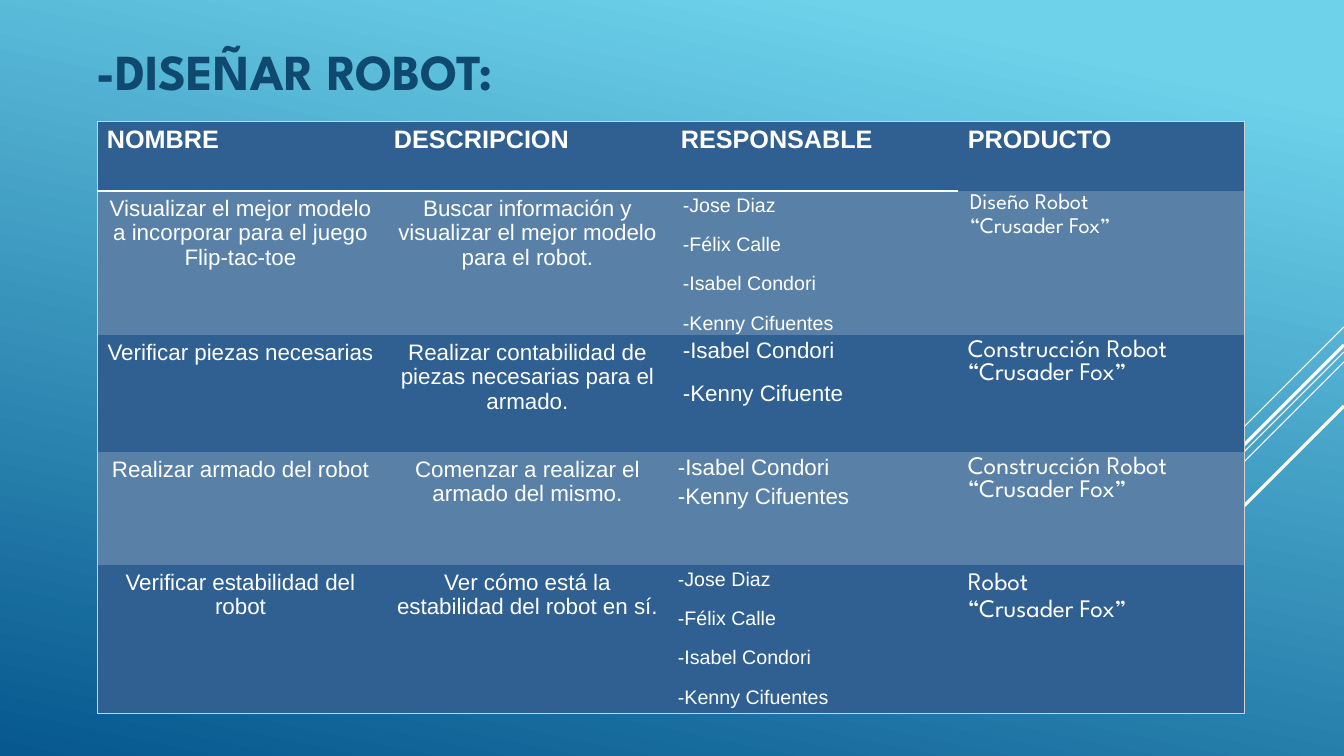
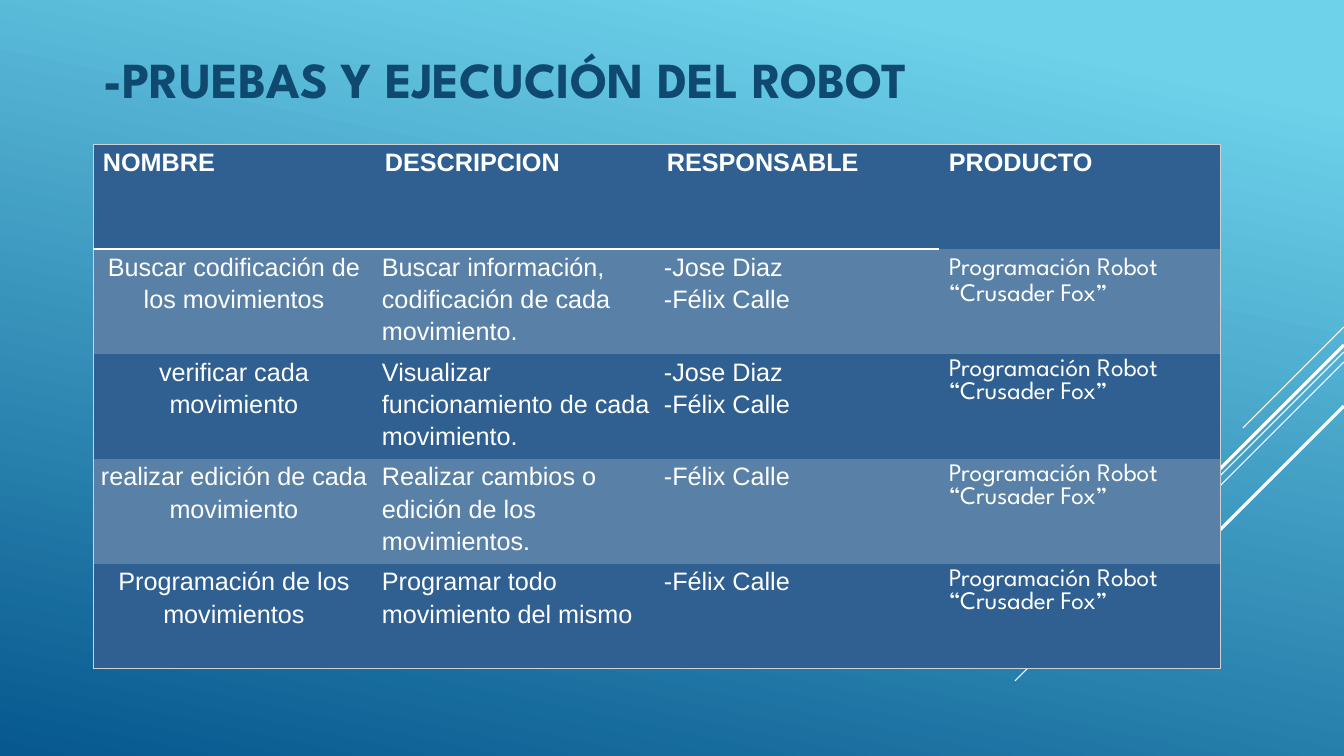
from lxml import etree
from pptx import Presentation
from pptx.dml.color import RGBColor
from pptx.enum.shapes import MSO_CONNECTOR
from pptx.enum.text import MSO_ANCHOR, MSO_AUTO_SIZE, PP_ALIGN
from pptx.oxml.ns import qn
from pptx.util import Pt

SLIDE_W, SLIDE_H = 1344, 756
EMU_PER_PX = 12192000 / SLIDE_W

WHITE = RGBColor(0xFF, 0xFF, 0xFF)
SKY = RGBColor(0x6E, 0xD2, 0xEB)
DEEP_BLUE = RGBColor(0x06, 0x58, 0x8E)
TITLE_BLUE = RGBColor(0x0F, 0x49, 0x6F)
ROW_DARK = RGBColor(0x2F, 0x60, 0x91)
ROW_LIGHT = RGBColor(0x59, 0x81, 0xA7)
FRAME_GREY = RGBColor(0xCF, 0xD1, 0xD5)

SANS, DISPLAY = "Arial", "League Spartan"
LEFT, CENTER = PP_ALIGN.LEFT, PP_ALIGN.CENTER
MIDDLE = MSO_ANCHOR.MIDDLE
NO_AUTOFIT = MSO_AUTO_SIZE.NONE
STRAIGHT = MSO_CONNECTOR.STRAIGHT
TITLE_ONLY = 5
NO_TABLE_STYLE = "{2D5ABB26-0587-4C30-8999-92F81FD0307C}"

# Diagonals from the right edge: start y, run in px, width in points
DIAGONALS = [(327, 101, 0.75), (352, 329, 0.75), (362, 209, 0.75),
             (345, 193, 2.25), (406, 140, 2.25)]

# Cell formats; margins are (side, top and bottom) in px
HEADER = dict(size=18, bold=True)
TASK = dict(size=16, align=CENTER)
TEAM = dict(size=14, spacing=1.15, gap=10, margins=(12, 0))
PAIR = dict(TEAM, size=16)
TIGHT_TEAM = dict(TEAM, margins=(7, 0))
TIGHT_PAIR = dict(size=16, spacing=1.15, margins=(7, 0))
PRODUCT = dict(size=18, font=DISPLAY)
LOOSE_PRODUCT = dict(PRODUCT, spacing=1.15)
SMALL_PRODUCT = dict(LOOSE_PRODUCT, size=16, margins=(12, 0))
STEP = dict(size=18, spacing=1.15, margins=(7, 0))
CENTERED_STEP = dict(STEP, align=CENTER)

HEADINGS = [(name, HEADER) for name in
            ("NOMBRE", "DESCRIPCION", "RESPONSABLE", "PRODUCTO")]
EVERYONE = "-Jose Diaz\n-Félix Calle\n-Isabel Condori\n-Kenny Cifuentes"
CODERS = "-Jose Diaz\n-Félix Calle"
BUILT = "Construcción Robot\v“Crusader Fox”"
PROGRAMMED = "Programación Robot\v“Crusader Fox”"

DESIGN_ROWS = [
    [("Visualizar el mejor modelo a incorporar para el juego Flip-tac-toe", TASK),
     ("Buscar información y visualizar el mejor modelo para el robot.", TASK),
     (EVERYONE, TEAM),
     ("Diseño Robot\v“Crusader Fox”", SMALL_PRODUCT)],
    [("Verificar piezas necesarias", TASK),
     ("Realizar contabilidad de piezas necesarias para el armado.", TASK),
     ("-Isabel Condori\n-Kenny Cifuente", PAIR),
     (BUILT, PRODUCT)],
    [("Realizar armado del robot", TASK),
     ("Comenzar a realizar el armado del mismo.", TASK),
     ("-Isabel Condori\n-Kenny Cifuentes", TIGHT_PAIR),
     (BUILT, PRODUCT)],
    [("Verificar estabilidad del robot", TASK),
     ("Ver cómo está la estabilidad del robot en sí.", TASK),
     (EVERYONE, TIGHT_TEAM),
     ("Robot\v“Crusader Fox”", LOOSE_PRODUCT)],
]

TEST_STEPS = [
    ("Buscar codificación de los movimientos",
     "Buscar información, codificación de cada movimiento.", CODERS),
    ("verificar cada movimiento",
     "Visualizar funcionamiento de cada movimiento.", CODERS),
    ("realizar edición de cada movimiento",
     "Realizar cambios o edición de los movimientos.", "-Félix Calle"),
    ("Programación de los movimientos",
     "Programar todo movimiento del mismo", "-Félix Calle"),
]
TEST_ROWS = [
    [(name, CENTERED_STEP), (description, STEP), (people, STEP),
     (PROGRAMMED, PRODUCT if i else LOOSE_PRODUCT)]
    for i, (name, description, people) in enumerate(TEST_STEPS)
]


def px(n):
    return round(n * EMU_PER_PX)


def write(tf, text, *, size, font=SANS, color=WHITE, bold=False, align=LEFT,
          spacing=1.0, gap=0):
    """Split text into paragraphs at newlines; \\v is a line break."""
    tf.word_wrap = True
    for i, line in enumerate(text.split("\n")):
        p = tf.add_paragraph() if i else tf.paragraphs[0]
        p.text = line
        p.alignment = align
        p.line_spacing = spacing
        p.space_before = Pt(gap if i else 0)
        for r in p.runs:
            r.font.name = font
            r.font.size = Pt(size)
            r.font.bold = bold
            r.font.color.rgb = color


def set_background(master):
    fill = master.background.fill
    fill.gradient()
    fill.gradient_angle = 258
    for stop, color, position in zip(fill.gradient_stops, (SKY, DEEP_BLUE), (0.1, 1)):
        stop.color.rgb = color
        stop.position = position


def add_diagonals(s):
    for y, run, width in DIAGONALS:
        line = s.shapes.add_connector(STRAIGHT, px(SLIDE_W), px(y),
                                      px(SLIDE_W - run), px(y + run))
        line.line.color.rgb = WHITE
        line.line.width = Pt(width)
        etree.SubElement(line.element.find(qn("p:spPr")), qn("a:effectLst"))


def place_title(s, text, x, y):
    title = s.shapes.title
    title.left, title.top, title.width, title.height = map(px, (x, y, 1092, 98))
    tf = title.text_frame
    tf.auto_size = NO_AUTOFIT
    tf.vertical_anchor = MIDDLE
    write(tf, text, size=36, font=DISPLAY, color=TITLE_BLUE, bold=True, spacing=0.9)


def add_border(cell, side, color, width, alpha=100):
    tc_pr = cell._tc.get_or_add_tcPr()
    ln = etree.SubElement(tc_pr, qn(f"a:ln{side}"), w=str(Pt(width)))
    fill = etree.SubElement(ln, qn("a:solidFill"))
    clr = etree.SubElement(fill, qn("a:srgbClr"), val=str(color))
    etree.SubElement(clr, qn("a:alpha"), val=str(alpha * 1000))


def format_cell(cell, text, *, margins=(10, 5), **text_format):
    side, end = map(px, margins)
    cell.margin_left = cell.margin_right = side
    cell.margin_top = cell.margin_bottom = end
    write(cell.text_frame, text, **text_format)


def add_plan_table(s, x, y, col_width, row_heights, body):
    rows = [HEADINGS] + body
    n_cols, last_row = len(HEADINGS), len(rows) - 1
    frame = s.shapes.add_table(len(rows), n_cols, px(x), px(y),
                               px(col_width * n_cols), px(sum(row_heights)))
    frame.element.find(".//" + qn("a:tableStyleId")).text = NO_TABLE_STYLE
    table = frame.table
    table.horz_banding = False
    for column in table.columns:
        column.width = px(col_width)
    for i, (row, height) in enumerate(zip(rows, row_heights)):
        table.rows[i].height = px(height)
        for j, (text, cell_format) in enumerate(row):
            cell = table.cell(i, j)
            format_cell(cell, text, **cell_format)
            edges = [("L", j == 0), ("R", j == n_cols - 1),
                     ("T", i == 0), ("B", i == last_row)]
            for side, on_edge in edges:
                if on_edge:
                    add_border(cell, side, FRAME_GREY, 0.75, alpha=60)
            if i == 0 and j < n_cols - 1:
                add_border(cell, "B", WHITE, 2.25)
            cell.fill.solid()
            cell.fill.fore_color.rgb = ROW_LIGHT if i % 2 else ROW_DARK


def add_plan_slide(prs, title, title_at, table_at, col_width, row_heights, body):
    s = prs.slides.add_slide(prs.slide_layouts[TITLE_ONLY])
    add_diagonals(s)
    place_title(s, title, *title_at)
    add_plan_table(s, *table_at, col_width, row_heights, body)


def main():
    prs = Presentation()
    prs.slide_width, prs.slide_height = px(SLIDE_W), px(SLIDE_H)
    set_background(prs.slide_master)
    add_plan_slide(prs, "-DISEÑAR ROBOT:", (86, 25), (97, 121), 287,
                   [70, 144, 117, 113, 149], DESIGN_ROWS)
    add_plan_slide(prs, "-PRUEBAS Y EJECUCIÓN DEL ROBOT", (93, 33), (93, 144), 282,
                   [105] * 5, TEST_ROWS)
    prs.save("out.pptx")


if __name__ == "__main__":
    main()
